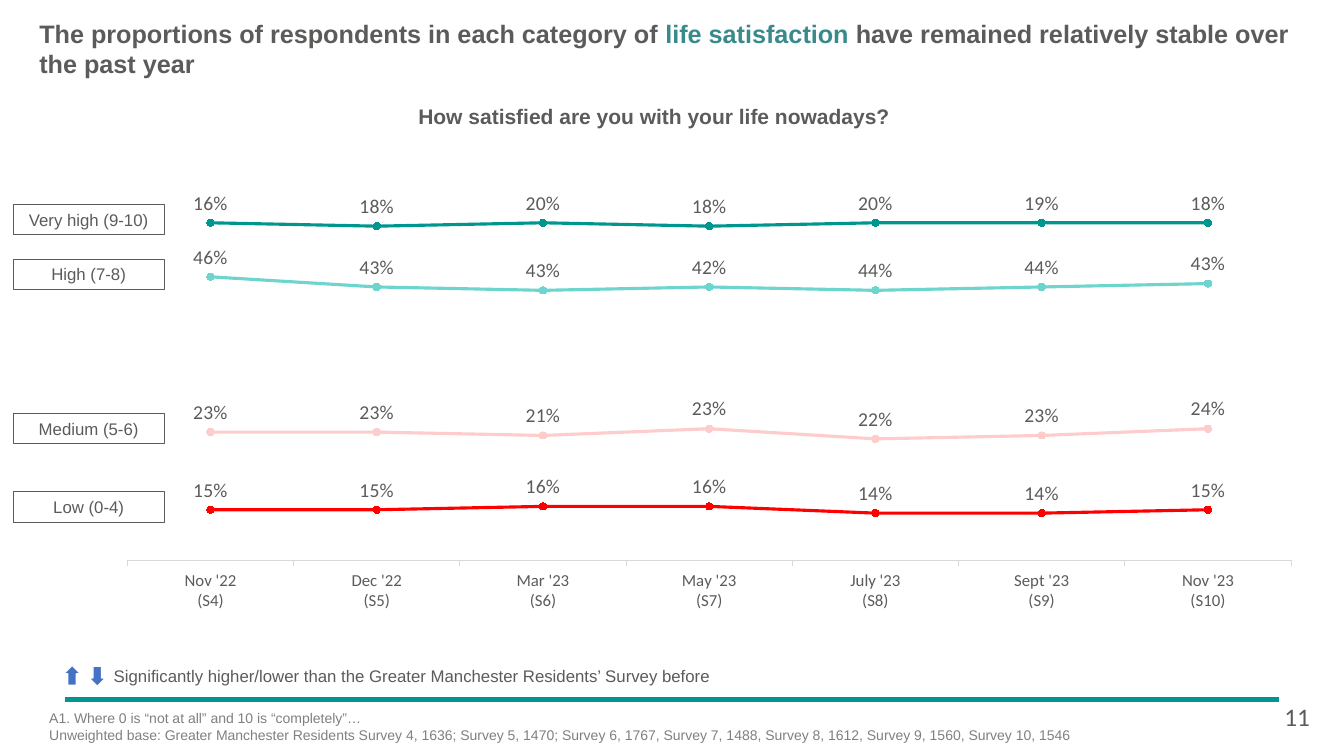
from dataclasses import dataclass

from lxml import etree
from pptx import Presentation
from pptx import util as u
from pptx.chart import data as chart_data
from pptx.dml.color import RGBColor
from pptx.enum import chart as ch
from pptx.enum import shapes, text
from pptx.oxml import parse_xml
from pptx.oxml.ns import nsdecls, qn

COLOURS = {
    "ink": "5C5B5A",
    "note": "808080",
    "accent": "388A8C",
    "axis": "D9D9D9",
    "arrow": "4472C4",
    "white": "FFFFFF",
    "low": "FF0000",
    "medium": "FFCCCC",
    "high": "6DD5CE",
    "very_high": "009690",
}


@dataclass(frozen=True)
class Run:
    words: str
    size: float
    colour: str = "ink"
    bold: bool = False
    font: str = "Arial"


@dataclass(frozen=True)
class TextBlock:
    box: tuple[float, float, float, float]
    paragraphs: list[list[Run]]
    wrap: bool = True
    inset: bool = True


@dataclass(frozen=True)
class Category:
    label: str
    colour: str
    label_top: float
    shares: tuple[float, ...]


@dataclass(frozen=True)
class Arrow:
    left: float
    top: float
    rotation: float


SURVEYS = ["Nov '22\n(S4)", "Dec '22\n(S5)", "Mar '23\n(S6)", "May '23\n(S7)",
           "July '23\n(S8)", "Sept '23\n(S9)", "Nov '23\n(S10)"]

# Stacked from the bottom up
CATEGORIES = [
    Category("Low (0-4)", "low", 4.88, (0.15, 0.15, 0.16, 0.16, 0.14, 0.14, 0.15)),
    Category("Medium (5-6)", "medium", 4.1, (0.23, 0.23, 0.21, 0.23, 0.22, 0.23, 0.24)),
    Category("High (7-8)", "high", 2.57, (0.46, 0.43, 0.43, 0.42, 0.44, 0.44, 0.43)),
    Category("Very high (9-10)", "very_high", 2.03, (0.16, 0.18, 0.2, 0.18, 0.2, 0.19, 0.18)),
]

ARROWS = [Arrow(0.88, 6.61, 0), Arrow(0.63, 6.6, 180)]

TEXT_BLOCKS = [
    TextBlock((0.39, 0.18, 12.56, 0.61), [[
        Run("The proportions of respondents in each category of ", 18, bold=True),
        Run("life satisfaction ", 18, "accent", bold=True),
        Run("have remained relatively stable\u00a0over the past year", 18, bold=True),
    ]], inset=False),
    TextBlock((4.05, 0.98, 4.92, 0.35),
              [[Run("How satisfied are you with your life nowadays?", 15, bold=True)]], wrap=False),
    TextBlock((1.03, 6.56, 6.14, 0.3), [[
        Run("Significantly higher/lower than the Greater Manchester Residents’ Survey before", 12),
    ]], wrap=False),
    TextBlock((0.39, 6.99, 11.6, 0.5), [
        [Run("A1. Where 0 is “not at all” and 10 is “completely”…", 10, "note")],
        [Run("Unweighted base: Greater Manchester Residents Survey 4, 1636; Survey 5, 1470; "
             "Survey 6, 1767, Survey 7, 1488, Survey 8, 1612, Survey 9, 1560, Survey 10, 1546",
             10, "note")],
    ]),
    TextBlock((12.64, 6.91, 0.53, 0.4), [[Run("11", 18, font="Calibri")]]),
]


def rgb(name: str) -> RGBColor:
    return RGBColor.from_string(COLOURS[name])


def inches(*lengths: float) -> list[u.Length]:
    return [u.Inches(length) for length in lengths]


def style_font(font, size: float, colour: str, family: str) -> None:
    font.size = u.Pt(size)
    font.name = family
    font.color.rgb = rgb(colour)


def add_run(paragraph, run: Run) -> None:
    piece = paragraph.add_run()
    piece.text = run.words
    piece.font.bold = run.bold
    style_font(piece.font, run.size, run.colour, run.font)


def add_text(slide, block: TextBlock) -> None:
    frame = slide.shapes.add_textbox(*inches(*block.box)).text_frame
    frame.word_wrap = block.wrap
    if not block.inset:
        frame.margin_left = frame.margin_right = frame.margin_top = frame.margin_bottom = 0
    for index, runs in enumerate(block.paragraphs):
        paragraph = frame.add_paragraph() if index else frame.paragraphs[0]
        for run in runs:
            add_run(paragraph, run)


def add_category_label(slide, category: Category) -> None:
    label = slide.shapes.add_shape(shapes.MSO_SHAPE.RECTANGLE,
                                   *inches(0.13, category.label_top, 1.5, 0.3))
    label.shadow.inherit = False
    label.fill.background()
    label.line.color.rgb = rgb("ink")
    label.line.width = u.Pt(0.75)
    label.text_frame.vertical_anchor = text.MSO_ANCHOR.MIDDLE
    paragraph = label.text_frame.paragraphs[0]
    paragraph.alignment = text.PP_ALIGN.CENTER
    add_run(paragraph, Run(category.label, 12))


def add_arrow(slide, arrow: Arrow) -> None:
    marker = slide.shapes.add_shape(shapes.MSO_SHAPE.DOWN_ARROW,
                                    *inches(arrow.left, arrow.top, 0.17, 0.2))
    marker.rotation = arrow.rotation
    marker.shadow.inherit = False
    marker.fill.solid()
    marker.fill.fore_color.rgb = rgb("arrow")
    marker.line.color.rgb = rgb("white")
    marker.line.width = u.Pt(1)


def add_footer_rule(slide) -> None:
    rule = slide.shapes.add_connector(shapes.MSO_CONNECTOR.STRAIGHT,
                                      *inches(0.64, 6.94, 12.69, 6.94))
    rule.line.color.rgb = rgb("very_high")
    rule.line.width = u.Pt(3)
    etree.SubElement(rule._element.spPr, qn("a:effectLst"))


def set_plot_area(chart, x: float, y: float, w: float, h: float) -> None:
    """Fix the inner plot area, in fractions of the chart."""
    plot_area = chart._chartSpace.chart.plotArea
    for old in plot_area.findall(qn("c:layout")):
        plot_area.remove(old)
    sizes = "".join(f'<c:{tag} val="{value}"/>' for tag, value in zip("xywh", (x, y, w, h)))
    plot_area.insert(0, parse_xml(
        f'<c:layout {nsdecls("c")}><c:manualLayout><c:layoutTarget val="inner"/>'
        f'<c:xMode val="edge"/><c:yMode val="edge"/>{sizes}</c:manualLayout></c:layout>'))


def style_series(series, colour: str) -> None:
    series.smooth = False
    series.format.line.color.rgb = rgb(colour)
    series.format.line.width = u.Pt(2.25)
    series.marker.style = ch.XL_MARKER_STYLE.CIRCLE
    series.marker.size = 5
    series.marker.format.fill.solid()
    series.marker.format.fill.fore_color.rgb = rgb(colour)
    series.marker.format.line.color.rgb = rgb(colour)
    labels = series.data_labels
    labels.show_value = True
    labels.position = ch.XL_LABEL_POSITION.ABOVE
    labels.number_format = "0%"
    labels.number_format_is_linked = False
    style_font(labels.font, 14, "ink", "Calibri")


def add_satisfaction_chart(slide) -> None:
    shares = chart_data.CategoryChartData(number_format="0%")
    shares.categories = SURVEYS
    for category in CATEGORIES:
        shares.add_series(category.label, category.shares)
    chart = slide.shapes.add_chart(ch.XL_CHART_TYPE.LINE_MARKERS_STACKED,
                                   *inches(1.17, 1.43, 11.64, 4.82), shares).chart
    chart.has_legend = chart.has_title = False
    style_font(chart.font, 12, "ink", "Calibri")
    chart.plots[0].vary_by_categories = False
    for series, category in zip(chart.plots[0].series, CATEGORIES):
        style_series(series, category.colour)

    survey_axis, share_axis = chart.category_axis, chart.value_axis
    survey_axis.major_tick_mark = ch.XL_TICK_MARK.OUTSIDE
    survey_axis.format.line.color.rgb = rgb("axis")
    survey_axis.format.line.width = u.Pt(0.75)
    style_font(survey_axis.tick_labels.font, 12, "ink", "Calibri")
    share_axis.minimum_scale, share_axis.maximum_scale = 0, 1.2
    share_axis.has_major_gridlines = False
    share_axis.visible = False
    set_plot_area(chart, 0.008, 0.023, 0.992, 0.834)


def main() -> None:
    deck = Presentation()
    deck.slide_width, deck.slide_height = inches(13.33, 7.5)
    slide = deck.slides.add_slide(deck.slide_layouts[6])
    add_footer_rule(slide)
    for category in CATEGORIES:
        add_category_label(slide, category)
    add_satisfaction_chart(slide)
    for arrow in ARROWS:
        add_arrow(slide, arrow)
    for block in TEXT_BLOCKS:
        add_text(slide, block)
    deck.save("out.pptx")


if __name__ == "__main__":
    main()
